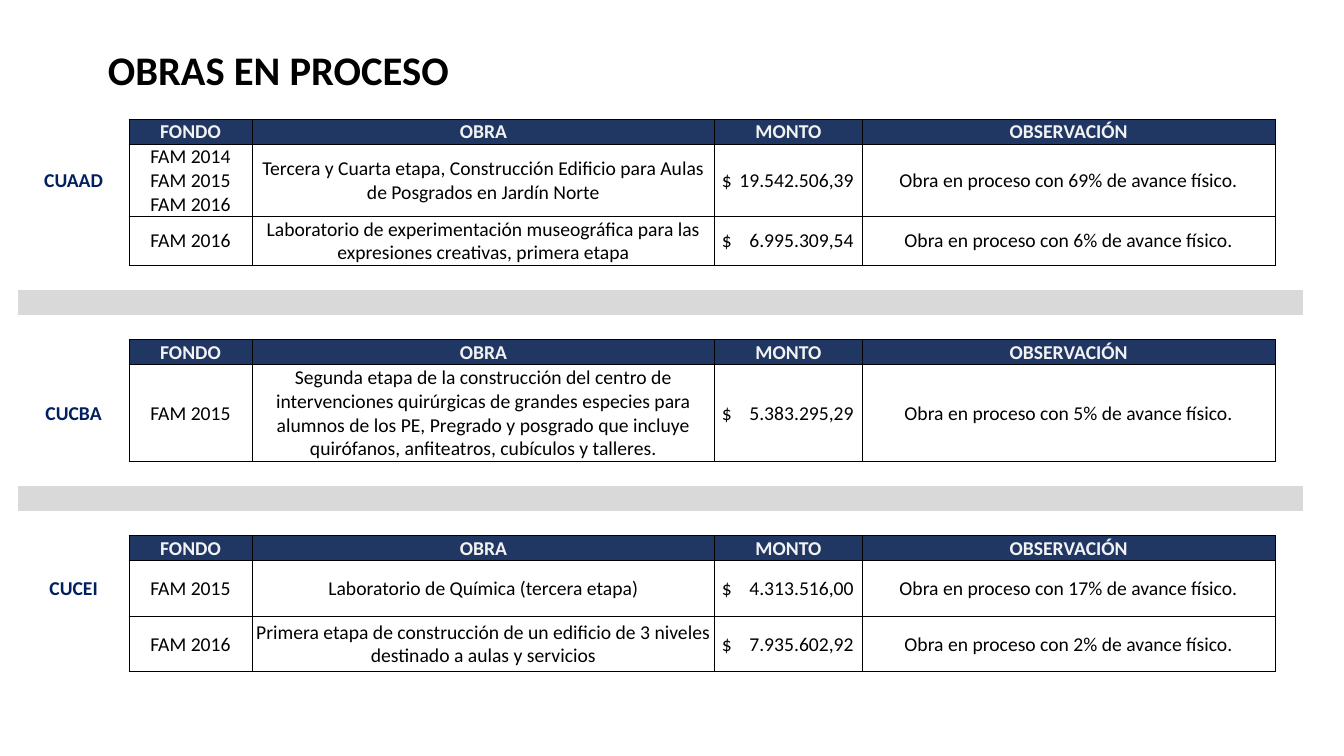
"""Build the slide that lists works in progress by university centre."""
from dataclasses import dataclass

from lxml.etree import SubElement
from pptx import Presentation
from pptx.dml.color import RGBColor
from pptx.enum.text import MSO_ANCHOR, MSO_AUTO_SIZE, PP_ALIGN
from pptx.oxml.ns import qn
from pptx.slide import Slide
from pptx.table import Table, _Cell
from pptx.util import Inches, Pt

BLACK = RGBColor(0x00, 0x00, 0x00)
WHITE = RGBColor(0xFF, 0xFF, 0xFF)
NAVY = RGBColor(0x20, 0x37, 0x64)
LABEL_BLUE = RGBColor(0x00, 0x20, 0x60)
HEADER_TEXT = RGBColor(0xF2, 0xF2, 0xF2)
BAND_GREY = RGBColor(0xD9, 0xD9, 0xD9)

FONT = "Calibri"
NO_STYLE = "{2D5ABB26-0587-4C30-8999-92F81FD0307C}"
HEADERS = ("FONDO", "OBRA", "MONTO", "OBSERVACIÓN")
COLUMN_WIDTHS = (1.1, 1.22, 4.59, 1.46, 4.1, 0.27)
AMOUNT_COLUMN = 3
LINE_HEIGHT = 0.24


@dataclass(frozen=True)
class Work:
    fund: str
    name: str
    amount: str
    progress: int
    height: float

    def texts(self) -> tuple[str, ...]:
        note = f"Obra en proceso con {self.progress}% de avance físico."
        return self.fund, self.name, f"$\t{self.amount}", note


@dataclass(frozen=True)
class Centre:
    label: str
    works: tuple[Work, ...]


CENTRES = (
    Centre("CUAAD", (
        Work("FAM 2014\vFAM 2015\vFAM 2016",
             "Tercera y Cuarta etapa, Construcción Edificio para Aulas de Posgrados en Jardín Norte",
             "19.542.506,39", 69, 0.71),
        Work("FAM 2016",
             "Laboratorio de experimentación museográfica para las expresiones creativas, primera etapa",
             "6.995.309,54", 6, 0.48),
    )),
    Centre("CUCBA", (
        Work("FAM 2015",
             "Segunda etapa de la construcción del centro de intervenciones quirúrgicas de grandes "
             "especies para alumnos de los PE, Pregrado y posgrado que incluye quirófanos, "
             "anfiteatros, cubículos y talleres.",
             "5.383.295,29", 5, 0.95),
    )),
    Centre("CUCEI", (
        Work("FAM 2015", "Laboratorio de Química (tercera etapa)", "4.313.516,00", 17, 0.55),
        Work("FAM 2016",
             "Primera etapa de construcción de un edificio de 3 niveles destinado a aulas y servicios",
             "7.935.602,92", 2, 0.55),
    )),
)


@dataclass(frozen=True)
class Row:
    height: float = LINE_HEIGHT
    texts: tuple[str, ...] = ()
    label: str = ""
    fill: RGBColor | None = None
    color: RGBColor = BLACK
    bold: bool = False


def plan_rows() -> list[Row]:
    rows: list[Row] = []
    for centre in CENTRES:
        if rows:
            rows += [Row(fill=BAND_GREY), Row()]
        rows.append(Row(texts=HEADERS, fill=NAVY, color=HEADER_TEXT, bold=True))
        for index, work in enumerate(centre.works):
            label = centre.label if index == 0 else ""
            rows.append(Row(work.height, work.texts(), label, WHITE))
        rows.append(Row())
    return rows


def add_borders(cell: _Cell) -> None:
    properties = cell._tc.get_or_add_tcPr()
    for side in ("L", "R", "T", "B"):
        line = SubElement(properties, qn(f"a:ln{side}"), w=str(Pt(0.5)))
        fill = SubElement(line, qn("a:solidFill"))
        SubElement(fill, qn("a:srgbClr"), val=str(BLACK))


def fill_cell(cell: _Cell, text: str, color: RGBColor, bold: bool) -> None:
    cell.text = text
    cell.vertical_anchor = MSO_ANCHOR.MIDDLE
    cell.margin_left = cell.margin_right = cell.margin_top = Inches(0.01)
    cell.margin_bottom = 0
    paragraph = cell.text_frame.paragraphs[0]
    paragraph.alignment = PP_ALIGN.CENTER
    if "\t" in text:
        cell.margin_left = Inches(0.07)
        paragraph.alignment = PP_ALIGN.LEFT
        tabs = SubElement(paragraph._p.get_or_add_pPr(), qn("a:tabLst"))
        SubElement(tabs, qn("a:tab"), pos=str(Inches(1.31)), algn="r")
    paragraph.font.name = FONT
    paragraph.font.size = Pt(14)
    paragraph.font.bold = bold
    paragraph.font.color.rgb = color
    if not text:
        SubElement(paragraph._p, qn("a:endParaRPr"), sz="1400")


def draw_row(table: Table, index: int, row: Row) -> None:
    table.rows[index].height = Inches(row.height)
    last = len(COLUMN_WIDTHS) - 1
    texts = (row.label, *(row.texts or [""] * len(HEADERS)), "")
    for column, text in enumerate(texts):
        cell = table.cell(index, column)
        inside = 0 < column < last
        if row.texts and inside:
            add_borders(cell)
        if row.fill is not None and (inside or not row.texts):
            cell.fill.solid()
            cell.fill.fore_color.rgb = row.fill
        else:
            cell.fill.background()
        fill_cell(cell, text, row.color if inside else LABEL_BLUE, row.bold or not inside)


def add_works_table(slide: Slide) -> None:
    rows = plan_rows()
    frame = slide.shapes.add_table(
        len(rows), len(COLUMN_WIDTHS), Inches(0.18), Inches(1.18),
        Inches(sum(COLUMN_WIDTHS)), Inches(sum(row.height for row in rows)))
    table = frame.table
    table.first_row = table.horz_banding = False
    table._tbl.tblPr.find(qn("a:tableStyleId")).text = NO_STYLE
    for column, width in zip(table.columns, COLUMN_WIDTHS):
        column.width = Inches(width)
    for index, row in enumerate(rows):
        draw_row(table, index, row)


def add_title(slide: Slide) -> None:
    title = slide.shapes.title
    title.left, title.top = Inches(0.97), Inches(0.39)
    title.width, title.height = Inches(6.67), Inches(0.59)
    title.text_frame.text = "OBRAS EN PROCESO"
    title.text_frame.auto_size = MSO_AUTO_SIZE.NONE
    title.text_frame.vertical_anchor = MSO_ANCHOR.MIDDLE
    paragraph = title.text_frame.paragraphs[0]
    paragraph.alignment = PP_ALIGN.LEFT
    paragraph.font.name = FONT
    paragraph.font.size = Pt(29)
    paragraph.font.bold = True
    paragraph.font.color.rgb = BLACK


def main() -> None:
    presentation = Presentation()
    presentation.slide_width = Inches(13.33)
    presentation.slide_height = Inches(7.5)
    slide = presentation.slides.add_slide(presentation.slide_layouts[5])
    add_title(slide)
    add_works_table(slide)
    presentation.save("out.pptx")


if __name__ == "__main__":
    main()
